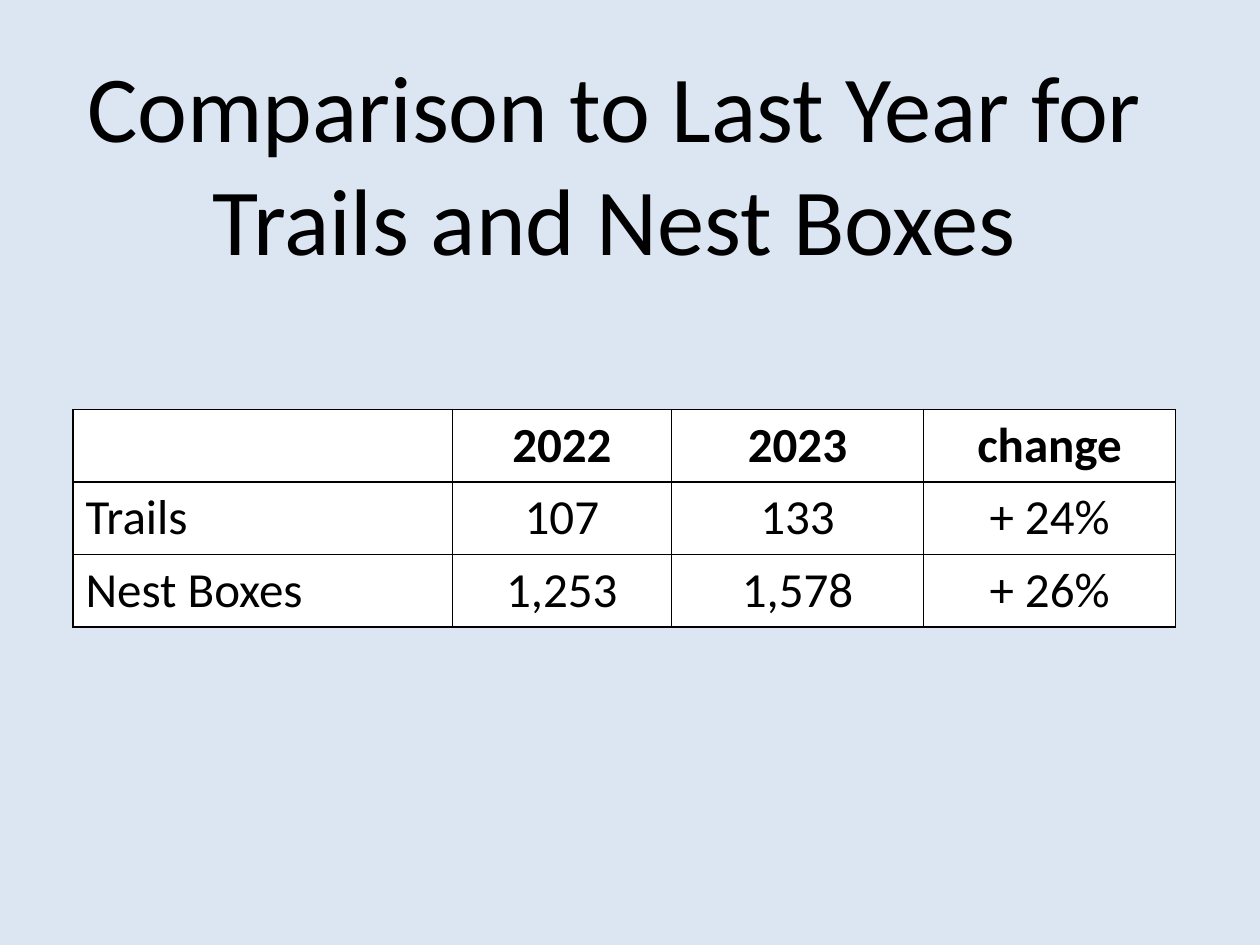
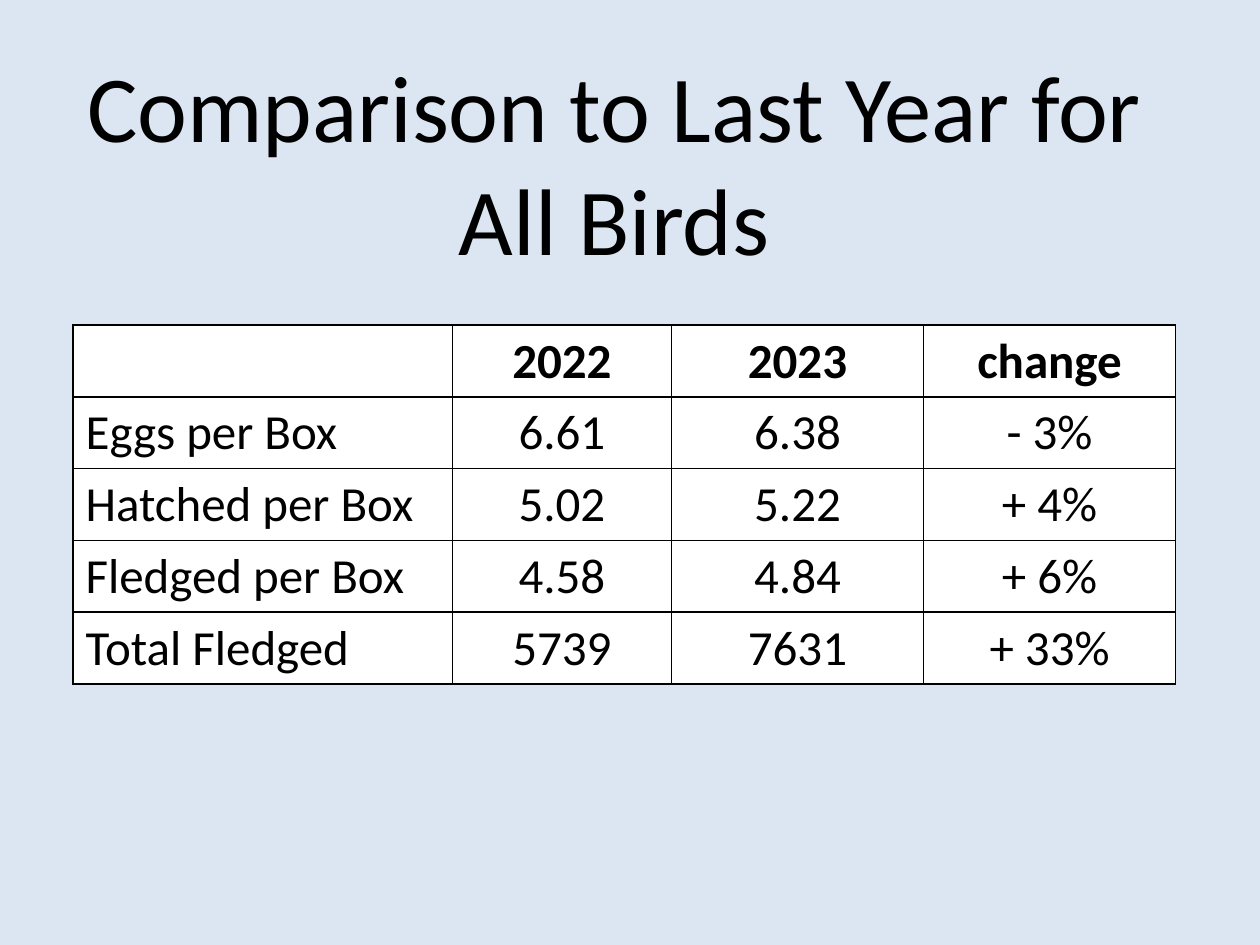
from dataclasses import dataclass

from lxml import etree
from pptx import Presentation
from pptx import util as u
from pptx.dml.color import RGBColor
from pptx.enum import text
from pptx.oxml import ns


@dataclass(frozen=True)
class Theme:
    background: str = "DCE6F2"
    cell: str = "FFFFFF"
    ink: str = "000000"
    font: str = "Calibri"
    title_size: int = 54
    table_size: int = 28
    border: float = 1


THEME = Theme()
WIDTH, HEIGHT = 10, 7.5

# Boxes are left, top, width, height in inches
TITLE_BOX = (0.25, 0.33, 9.25, 1.92)
TABLE_LEFT, TABLE_WIDTH = 0.58, 8.75
ROW_HEIGHT = 0.57
COLUMN_SHARES = (3.01, 1.74, 2, 2)

HEADER = ("", "2022", "2023", "change")
COMPARISONS = [
    ("Comparison to Last Year for Trails and Nest Boxes", 3.25, [
        ("Trails", "107", "133", "+ 24%"),
        ("Nest Boxes", "1,253", "1,578", "+ 26%"),
    ]),
    ("Comparison to Last Year for All Birds", 2.58, [
        ("Eggs per Box", "6.61", "6.38", "- 3%"),
        ("Hatched per Box", "5.02", "5.22", "+ 4%"),
        ("Fledged per Box", "4.58", "4.84", "+ 6%"),
        ("Total Fledged", "5739", "7631", "+ 33%"),
    ]),
]


def write(tf, words, size, bold=False, align=text.PP_ALIGN.CENTER):
    """Put one formatted paragraph into a text frame."""
    p = tf.paragraphs[0]
    p.alignment = align
    p.font.size = u.Pt(size)
    if not words:
        return
    r = p.add_run()
    r.text = words
    r.font.name = THEME.font
    r.font.size = u.Pt(size)
    r.font.bold = bold
    r.font.color.rgb = RGBColor.from_string(THEME.ink)


def style_cell(cell):
    """Draw the four borders of a cell, then its fill."""
    props = cell._tc.get_or_add_tcPr()
    for side in ("lnL", "lnR", "lnT", "lnB"):
        line = etree.SubElement(props, ns.qn(f"a:{side}"), w=str(u.Pt(THEME.border)))
        fill = etree.SubElement(line, ns.qn("a:solidFill"))
        etree.SubElement(fill, ns.qn("a:srgbClr"), val=THEME.ink)
    cell.fill.solid()
    cell.fill.fore_color.rgb = RGBColor.from_string(THEME.cell)


def add_title(s, box, words):
    tf = s.shapes.add_textbox(*map(u.Inches, box)).text_frame
    tf.word_wrap = True
    write(tf, words, THEME.title_size)


def add_comparison_table(s, box, rows):
    frame = s.shapes.add_table(len(rows), len(HEADER), *map(u.Inches, box))
    table = frame.table
    table.horz_banding = False
    for column, share in zip(table.columns, COLUMN_SHARES):
        column.width = u.Inches(box[2] * share / sum(COLUMN_SHARES))
    for i, row in enumerate(rows):
        for j, words in enumerate(row):
            cell = table.cell(i, j)
            style_cell(cell)
            align = text.PP_ALIGN.CENTER if j else text.PP_ALIGN.LEFT
            write(cell.text_frame, words, THEME.table_size, bold=i == 0, align=align)


def add_comparison_slide(prs, title, table_top, records):
    s = prs.slides.add_slide(prs.slide_layouts[6])
    s.background.fill.solid()
    s.background.fill.fore_color.rgb = RGBColor.from_string(THEME.background)
    rows = [HEADER, *records]
    box = (TABLE_LEFT, table_top, TABLE_WIDTH, ROW_HEIGHT * len(rows))
    add_comparison_table(s, box, rows)
    add_title(s, TITLE_BOX, title)


def main():
    prs = Presentation()
    prs.slide_width, prs.slide_height = u.Inches(WIDTH), u.Inches(HEIGHT)
    for comparison in COMPARISONS:
        add_comparison_slide(prs, *comparison)
    prs.save("out.pptx")


if __name__ == "__main__":
    main()
